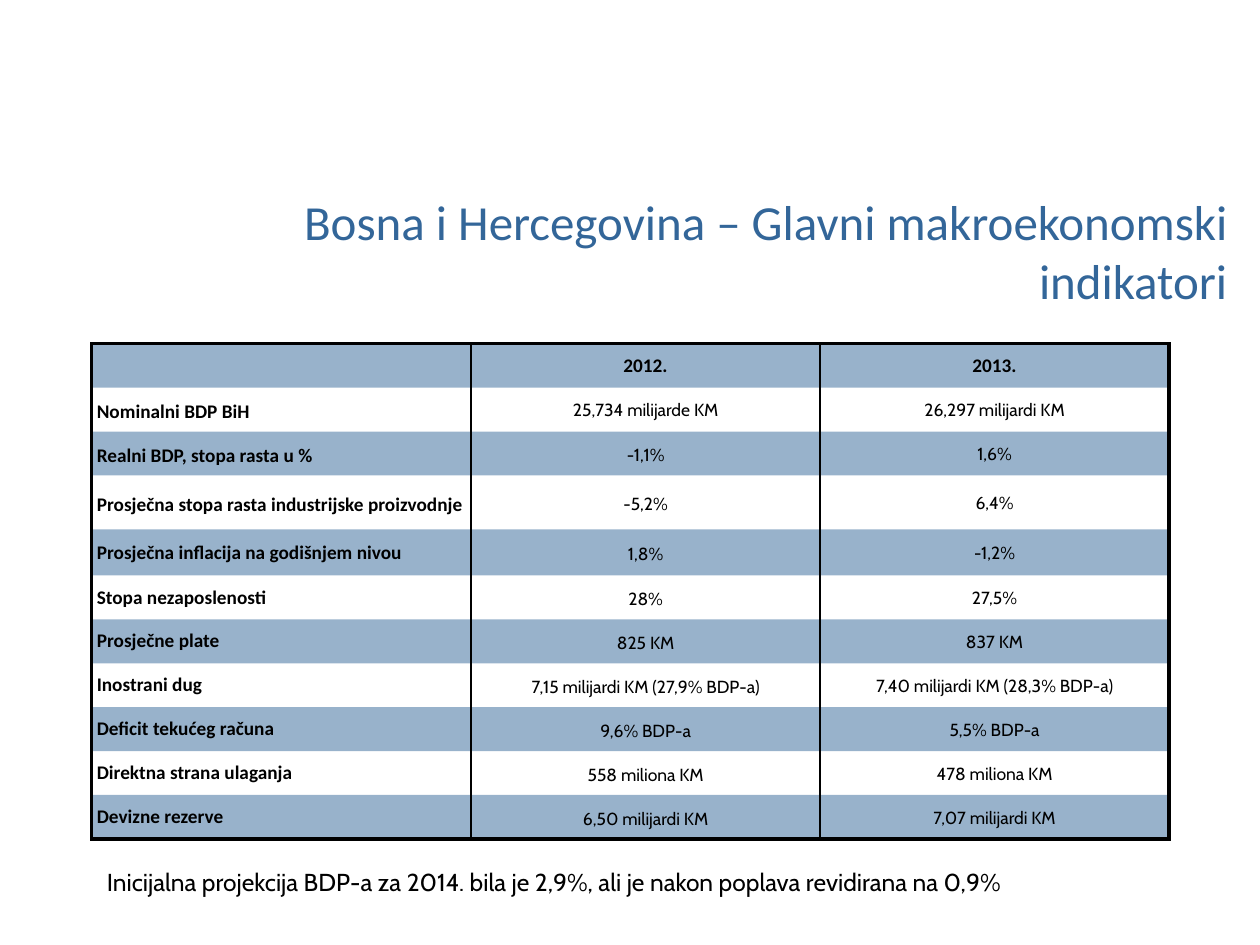
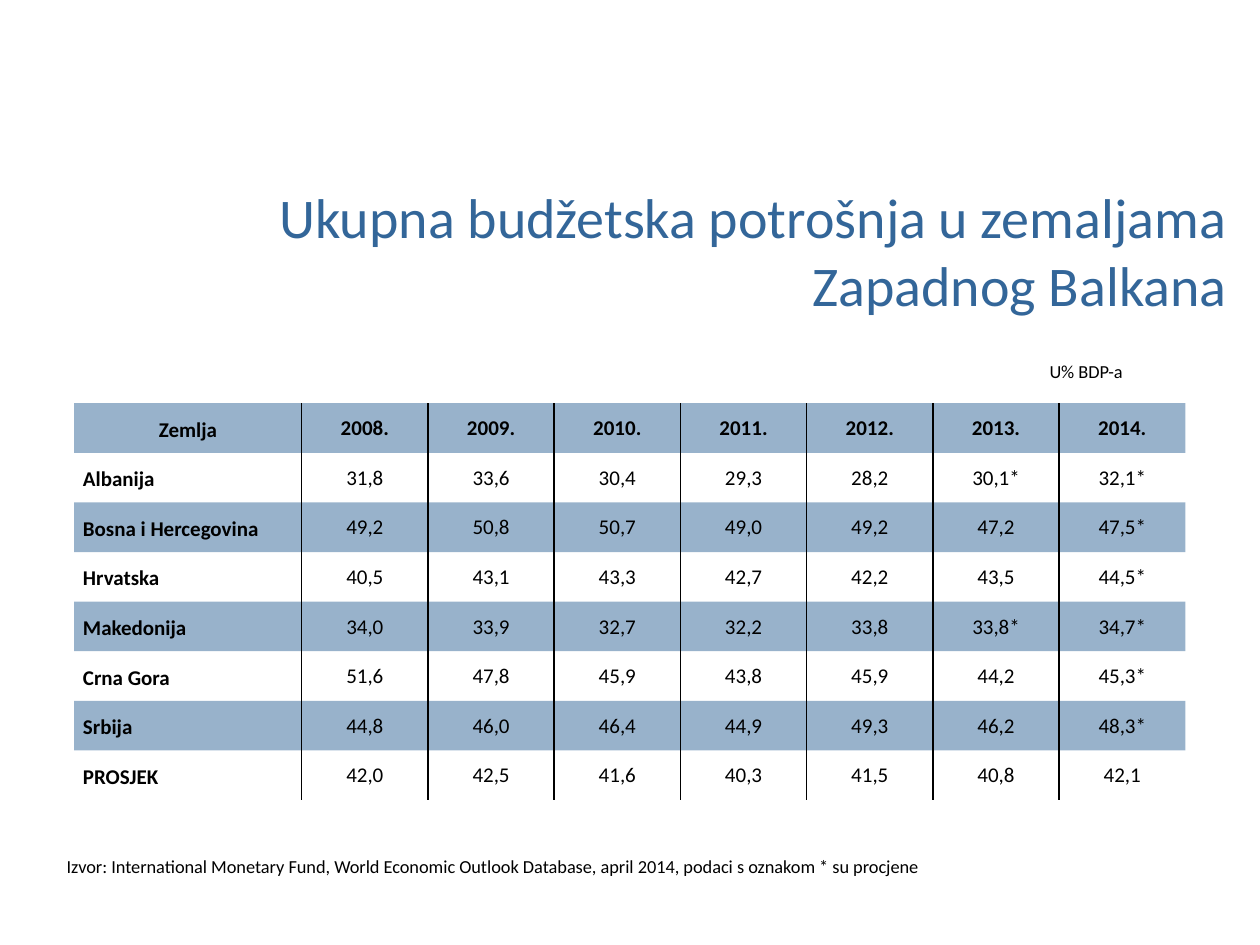
import dataclasses
import typing

import pptx
import pptx.dml.color
import pptx.enum.text
import pptx.oxml
import pptx.oxml.ns
import pptx.util

Pt = pptx.util.Pt
ALIGN = pptx.enum.text.PP_ALIGN
ANCHOR = pptx.enum.text.MSO_ANCHOR
AUTO_SIZE = pptx.enum.text.MSO_AUTO_SIZE

COLORS = {"accent": "336699", "ink": "000000"}
BAND_OPACITY = 50
HEADING_FONT = "Calibri"
FIGURE_FONT = "Cabin"
TITLE_BOX = (60.5, 117.4, 648, 51.1)


@dataclasses.dataclass(frozen=True)
class CellStyle:
    size: float
    font: str = HEADING_FONT
    bold: bool = False
    align: typing.Any = ALIGN.CENTER
    spacing: float | None = None
    after: float | None = None
    margins: tuple[float, float, float, float] = (0.7, 0.7, 0.7, 0)


@dataclasses.dataclass(frozen=True)
class Grid:
    left: float
    top: float
    widths: list[float]
    heights: list[float]
    rows: list[list[str]]
    styles: list[list[CellStyle]]
    frame: float | None = None
    divider: float = 1


@dataclasses.dataclass(frozen=True)
class Note:
    text: str
    box: tuple[float, float, float, float]
    size: float
    font: str = HEADING_FONT
    align: typing.Any = ALIGN.LEFT


def write(frame, text: str, *, size: float, font: str = HEADING_FONT,
          color: str = "ink", bold: bool = False, align=ALIGN.LEFT,
          spacing: float | None = None, after: float | None = None) -> None:
    paragraph = frame.paragraphs[0]
    paragraph.alignment = align
    if spacing:
        paragraph.line_spacing = spacing
    if after:
        paragraph.space_after = Pt(after)
    run = paragraph.add_run()
    run.text = text
    run.font.size = Pt(size)
    run.font.name = font
    run.font.bold = bold
    run.font.color.rgb = pptx.dml.color.RGBColor.from_string(COLORS[color])


def set_borders(cell, widths: dict[str, float | None]) -> None:
    properties = cell._tc.get_or_add_tcPr()
    namespace = pptx.oxml.ns.nsdecls("a")
    for position, (side, width) in enumerate(widths.items()):
        if width:
            xml = (f'<a:ln{side} {namespace} w="{Pt(width)}"><a:solidFill>'
                   f'<a:srgbClr val="{COLORS["ink"]}"/></a:solidFill></a:ln{side}>')
        else:
            xml = f'<a:ln{side} {namespace} w="0"><a:noFill/></a:ln{side}>'
        properties.insert(position, pptx.oxml.parse_xml(xml))


def fill_band(cell) -> None:
    cell.fill.solid()
    cell.fill.fore_color.rgb = pptx.dml.color.RGBColor.from_string(COLORS["accent"])
    tint = next(cell._tc.tcPr.iter(pptx.oxml.ns.qn("a:srgbClr")))
    alpha = tint.makeelement(pptx.oxml.ns.qn("a:alpha"), {"val": str(BAND_OPACITY * 1000)})
    tint.append(alpha)


def draw_grid(slide, grid: Grid) -> None:
    last_row, last_column = len(grid.heights) - 1, len(grid.widths) - 1
    table = slide.shapes.add_table(
        last_row + 1, last_column + 1, Pt(grid.left), Pt(grid.top),
        Pt(sum(grid.widths)), Pt(sum(grid.heights))).table
    table.first_row = table.horz_banding = False
    for column, width in zip(table.columns, grid.widths):
        column.width = Pt(width)
    for row, height in zip(table.rows, grid.heights):
        row.height = Pt(height)
    for r, (texts, styles) in enumerate(zip(grid.rows, grid.styles)):
        for c, (text, style) in enumerate(zip(texts, styles)):
            cell = table.cell(r, c)
            cell.vertical_anchor = ANCHOR.MIDDLE
            (cell.margin_left, cell.margin_top,
             cell.margin_right, cell.margin_bottom) = map(Pt, style.margins)
            if text:
                write(cell.text_frame, text, size=style.size, font=style.font,
                      bold=style.bold, align=style.align,
                      spacing=style.spacing, after=style.after)
            if r % 2 == 0:
                fill_band(cell)
            else:
                cell.fill.background()
            set_borders(cell, {
                "L": grid.divider if c else grid.frame,
                "R": grid.divider if c < last_column else grid.frame,
                "T": None if r else grid.frame,
                "B": None if r < last_row else grid.frame,
            })


def draw_note(slide, note: Note) -> None:
    frame = slide.shapes.add_textbox(*map(Pt, note.box)).text_frame
    frame.word_wrap = True
    frame.auto_size = AUTO_SIZE.SHAPE_TO_FIT_TEXT
    write(frame, note.text, size=note.size, font=note.font, align=note.align)


def add_slide(deck, title: str, title_size: float, grid: Grid, notes: list[Note]) -> None:
    slide = deck.slides.add_slide(deck.slide_layouts.get_by_name("Title Only"))
    heading = slide.shapes.title
    heading.left, heading.top, heading.width, heading.height = map(Pt, TITLE_BOX)
    heading.text_frame.word_wrap = True
    heading.text_frame.auto_size = AUTO_SIZE.NONE
    heading.text_frame.vertical_anchor = ANCHOR.MIDDLE
    write(heading.text_frame, title, size=title_size, color="accent", align=ALIGN.RIGHT)
    draw_grid(slide, grid)
    for note in notes:
        draw_note(slide, note)


def indicators_grid() -> Grid:
    header = CellStyle(11, bold=True, margins=(5, 0, 5, 0))
    label = CellStyle(11, bold=True, align=ALIGN.LEFT, margins=(2.9, 0, 5, 0))
    spaced_label = dataclasses.replace(label, spacing=1.15, margins=(2.9, 0.7, 1.4, 0))
    gdp = CellStyle(10, FIGURE_FONT, margins=(2.9, 0.7, 2.9, 0))
    figure_2012 = CellStyle(10, FIGURE_FONT, spacing=1.15, margins=(1.4, 0.7, 1.4, 0))
    figure_2013 = dataclasses.replace(figure_2012, spacing=1.07, after=8)
    rows = [
        ["", "2012.", "2013."],
        ["Nominalni BDP BiH", "25,734 milijarde KM", "26,297 milijardi KM"],
        ["Realni BDP, stopa rasta u %", "-1,1%", "1,6%"],
        ["Prosječna stopa rasta industrijske proizvodnje", "-5,2%", "6,4%"],
        ["Prosječna inflacija na godišnjem nivou", "1,8%", "-1,2%"],
        ["Stopa nezaposlenosti", "28%", "27,5%"],
        ["Prosječne plate", "825 KM", "837 KM"],
        ["Inostrani dug", "7,15 milijardi KM (27,9% BDP-a)", "7,40 milijardi KM (28,3% BDP-a)"],
        ["Deficit tekućeg računa", "9,6% BDP-a", "5,5% BDP-a"],
        ["Direktna strana ulaganja", "558 miliona KM", "478 miliona KM"],
        ["Devizne rezerve", "6,50 milijardi KM", "7,07 milijardi KM"],
    ]
    styles = ([[header] * 3, [spaced_label, gdp, gdp]]
              + [[spaced_label, figure_2012, figure_2013]] * 2
              + [[label, figure_2012, figure_2013]] * 7)
    heights = [25.1] * 3 + [30.8, 26.4] + [25.1] * 6
    return Grid(52.4, 196.4, [216.8, 199.4, 199.4], heights, rows, styles, frame=2.25)


def spending_grid() -> Grid:
    country = CellStyle(12, bold=True, align=ALIGN.LEFT, spacing=1.15, margins=(5, 0, 5, 0))
    corner = dataclasses.replace(country, align=ALIGN.CENTER)
    year = CellStyle(12, bold=True)
    share = CellStyle(12)
    rows = [
        ["Zemlja"] + [f"{y}." for y in range(2008, 2015)],
        ["Albanija", "31,8", "33,6", "30,4", "29,3", "28,2", "30,1*", "32,1*"],
        ["Bosna i Hercegovina", "49,2", "50,8", "50,7", "49,0", "49,2", "47,2", "47,5*"],
        ["Hrvatska", "40,5", "43,1", "43,3", "42,7", "42,2", "43,5", "44,5*"],
        ["Makedonija", "34,0", "33,9", "32,7", "32,2", "33,8", "33,8*", "34,7*"],
        ["Crna Gora", "51,6", "47,8", "45,9", "43,8", "45,9", "44,2", "45,3*"],
        ["Srbija", "44,8", "46,0", "46,4", "44,9", "49,3", "46,2", "48,3*"],
        ["PROSJEK", "42,0", "42,5", "41,6", "40,3", "41,5", "40,8", "42,1"],
    ]
    styles = [[corner] + [year] * 7] + [[country] + [share] * 7] * 7
    return Grid(42.4, 230.4, [130] + [72.15] * 7, [28.35] * 8, rows, styles)


def main() -> None:
    deck = pptx.Presentation()
    deck.slide_width, deck.slide_height = Pt(720), Pt(540)
    add_slide(
        deck, "Bosna i Hercegovina – Glavni makroekonomski indikatori", 28,
        indicators_grid(),
        [Note("Inicijalna projekcija BDP-a za 2014. bila je 2,9%, "
              "ali je nakon poplava revidirana na 0,9%",
              (54, 491.8, 607, 24.5), 14, FIGURE_FONT)])
    add_slide(
        deck, "Ukupna budžetska potrošnja u zemaljama Zapadnog Balkana", 32,
        spending_grid(),
        [Note("U% BDP-a", (25.2, 202.3, 623.5, 20), 10.5, align=ALIGN.RIGHT),
         Note("Izvor: International Monetary Fund, World Economic Outlook Database, "
              "april 2014, podaci s oznakom * su procjene",
              (31, 485.3, 623.5, 20), 10.5)])
    deck.save("out.pptx")


if __name__ == "__main__":
    main()
